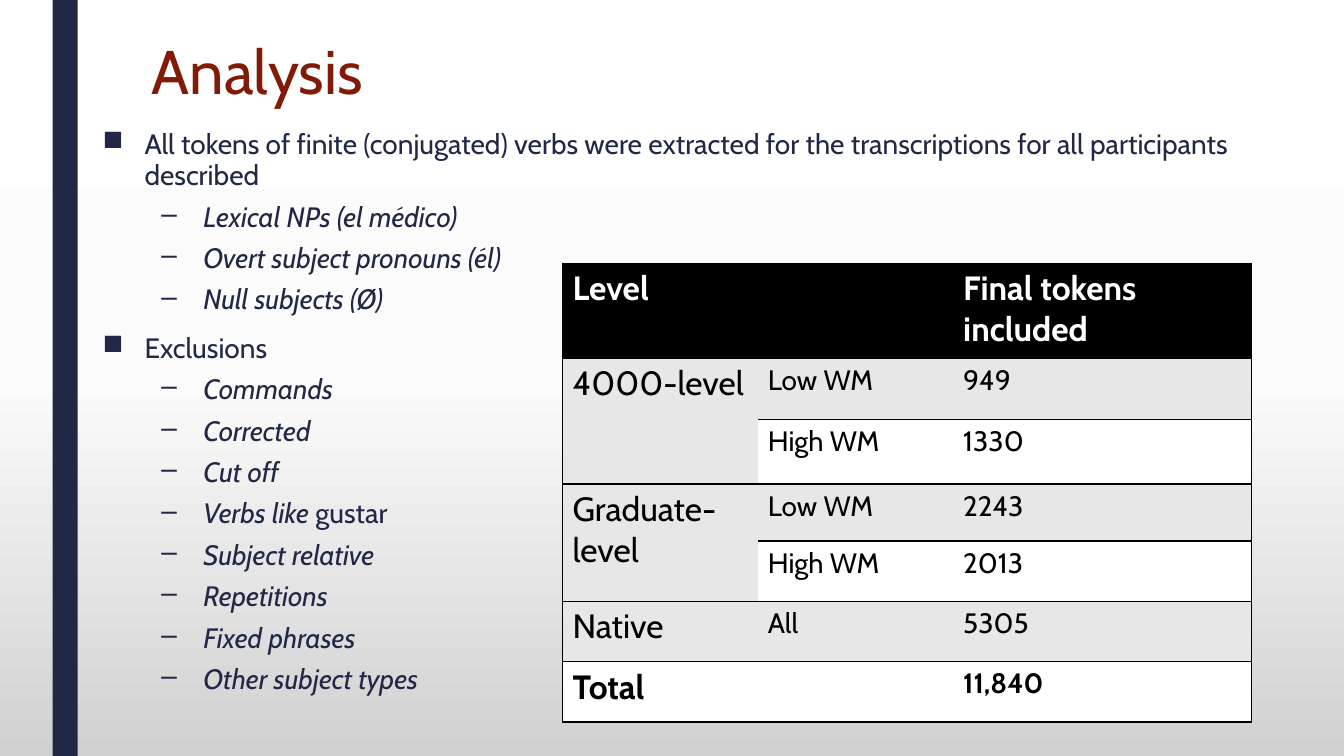
import copy

import pptx
import pptx.dml.color
import pptx.enum.shapes
import pptx.enum.text
import pptx.oxml
import pptx.oxml.ns
import pptx.util

Pt = pptx.util.Pt
qn = pptx.oxml.ns.qn
RGBColor = pptx.dml.color.RGBColor

NAVY = RGBColor(0x21, 0x27, 0x45)
BRICK = RGBColor(0x82, 0x1A, 0x08)
BLACK = RGBColor(0, 0, 0)
WHITE = RGBColor(0xFF, 0xFF, 0xFF)
BAND = RGBColor(0xE7, 0xE7, 0xE7)
BACKGROUND_STOPS = [(0, WHITE), (0.5, RGBColor(0xFB, 0xFB, 0xFB)),
                    (1, RGBColor(0xD1, 0xD1, 0xD1))]
FONT = "Cabin"
SLIDE_WIDTH, SLIDE_HEIGHT = 960, 540

# Each paragraph: level, then its runs as (text, italic)
OUTLINE = [
    (0, [("All tokens of finite (conjugated) verbs were extracted for the "
          "transcriptions for all participants described", False)]),
    (1, [("Lexical NPs (el médico)", True)]),
    (1, [("Overt subject pronouns (él)", True)]),
    (1, [("Null subjects (Ø)", True)]),
    (0, [("Exclusions", False)]),
    (1, [("Commands", True)]),
    (1, [("Corrected", True)]),
    (1, [("Cut off", True)]),
    (1, [("Verbs like ", True), ("gustar", False)]),
    (1, [("Subject relative", True)]),
    (1, [("Repetitions", True)]),
    (1, [("Fixed phrases", True)]),
    (1, [("Other subject types", True)]),
]
# Bullet, left margin and space before, by level
LEVELS = [("■", 30, 10), ("–", 72, 5)]
HANGING = 30

TOKEN_ROWS = [
    ("Level", "", "Final tokens included"),
    ("4000-level", "Low WM", "949"),
    ("", "High WM", "1330"),
    ("Graduate-level", "Low WM", "2243"),
    ("", "High WM", "2013"),
    ("Native", "All", "5305"),
    ("Total", "", "11,840"),
]
ROW_HEIGHTS = [67.5, 43.75, 46.25, 40.75, 43, 43.2, 43.2]
COLUMN_WIDTHS = [139.5, 139.5, 213]
MERGES = [((0, 0), (0, 1)), ((1, 0), (2, 0)), ((3, 0), (4, 0))]


def add_run(paragraph, text, **format_values):
    run = paragraph.add_run()
    run.text = text
    run.font.name = FONT
    run.font.color.rgb = format_values.pop("color")
    for attribute, value in format_values.items():
        setattr(run.font, attribute, value)


def add_text_frame(slide, box, anchor):
    frame = slide.shapes.add_textbox(*map(Pt, box)).text_frame
    frame.word_wrap = True
    frame.vertical_anchor = anchor
    return frame


def paint_background(slide):
    fill = slide.background.fill
    fill.gradient()
    fill.gradient_angle = 270
    stop_list = slide.element.find(".//" + qn("a:gsLst"))
    stop_list.append(copy.deepcopy(stop_list[-1]))
    for stop, (position, color) in zip(fill.gradient_stops, BACKGROUND_STOPS):
        stop.position = position
        stop.color.rgb = color


def add_side_bar(slide, box):
    bar = slide.shapes.add_shape(
        pptx.enum.shapes.MSO_SHAPE.RECTANGLE, *map(Pt, box))
    bar.shadow.inherit = False
    bar.fill.solid()
    bar.fill.fore_color.rgb = NAVY
    bar.line.fill.background()


def add_title(slide, box):
    frame = add_text_frame(slide, box, pptx.enum.text.MSO_ANCHOR.MIDDLE)
    heading = frame.paragraphs[0]
    heading.line_spacing = 0.89
    add_run(heading, "Analysis", size=Pt(44), color=BRICK)


def set_bullet(paragraph, bullet, margin):
    properties = paragraph._p.get_or_add_pPr()
    properties.set("marL", str(Pt(margin)))
    properties.set("indent", str(-Pt(HANGING)))
    mark = pptx.oxml.parse_xml(
        f'<a:buChar {pptx.oxml.ns.nsdecls("a")} char="{bullet}"/>')
    properties.append(mark)


def add_outline(slide, box):
    frame = add_text_frame(slide, box, pptx.enum.text.MSO_ANCHOR.TOP)
    for index, (level, runs) in enumerate(OUTLINE):
        item = frame.add_paragraph() if index else frame.paragraphs[0]
        bullet, margin, space_before = LEVELS[level]
        spacing = {"level": level, "line_spacing": 0.94,
                   "space_before": Pt(space_before), "space_after": Pt(2)}
        for attribute, value in spacing.items():
            setattr(item, attribute, value)
        set_bullet(item, bullet, margin)
        for text, italic in runs:
            add_run(item, text, size=Pt(20), italic=italic, color=NAVY)


def set_borders(cell, sides):
    """Draw black lines on the given sides (of L, R, T, B) and none elsewhere."""
    properties = cell._tc.get_or_add_tcPr()
    for side in "LRTB":
        paint = (f'<a:solidFill><a:srgbClr val="{BLACK}"/></a:solidFill>'
                 if side in sides else "<a:noFill/>")
        properties.append(pptx.oxml.parse_xml(
            f'<a:ln{side} {pptx.oxml.ns.nsdecls("a")} w="{Pt(1)}">'
            f'{paint}</a:ln{side}>'))


def fill_token_cell(cell, text, row, column):
    is_header, is_total = row == 0, row == len(TOKEN_ROWS) - 1
    sides = "" if cell.is_spanned and column == 0 else "TB"
    sides += {0: "L", len(COLUMN_WIDTHS) - 1: "R"}.get(column, "")
    set_borders(cell, sides)
    cell.fill.solid()
    cell.fill.fore_color.rgb = BLACK if is_header else BAND if row % 2 else WHITE
    if text:
        add_run(cell.text_frame.paragraphs[0], text,
                size=Pt(24 if is_header or column == 0 else 20),
                bold=is_header or is_total,
                color=WHITE if is_header else BLACK)


def add_token_table(slide, left, top):
    table = slide.shapes.add_table(
        len(TOKEN_ROWS), len(COLUMN_WIDTHS), Pt(left), Pt(top),
        Pt(sum(COLUMN_WIDTHS)), Pt(sum(ROW_HEIGHTS))).table
    table.horz_banding = False
    for column, width in zip(table.columns, COLUMN_WIDTHS):
        column.width = Pt(width)
    for row, height in zip(table.rows, ROW_HEIGHTS):
        row.height = Pt(height)
    for first, last in MERGES:
        table.cell(*first).merge(table.cell(*last))
    for row, texts in enumerate(TOKEN_ROWS):
        for column, text in enumerate(texts):
            fill_token_cell(table.cell(row, column), text, row, column)


def main():
    presentation = pptx.Presentation()
    presentation.slide_width = Pt(SLIDE_WIDTH)
    presentation.slide_height = Pt(SLIDE_HEIGHT)
    slide = presentation.slides.add_slide(presentation.slide_layouts[6])
    paint_background(slide)
    add_side_bar(slide, (37.5, 0, 18, SLIDE_HEIGHT))
    add_title(slide, (101.5, 28.8, 792, 49.7))
    add_outline(slide, (66.2, 88.5, 828, 437))
    add_token_table(slide, 401.8, 188.2)
    presentation.save("out.pptx")


if __name__ == "__main__":
    main()
